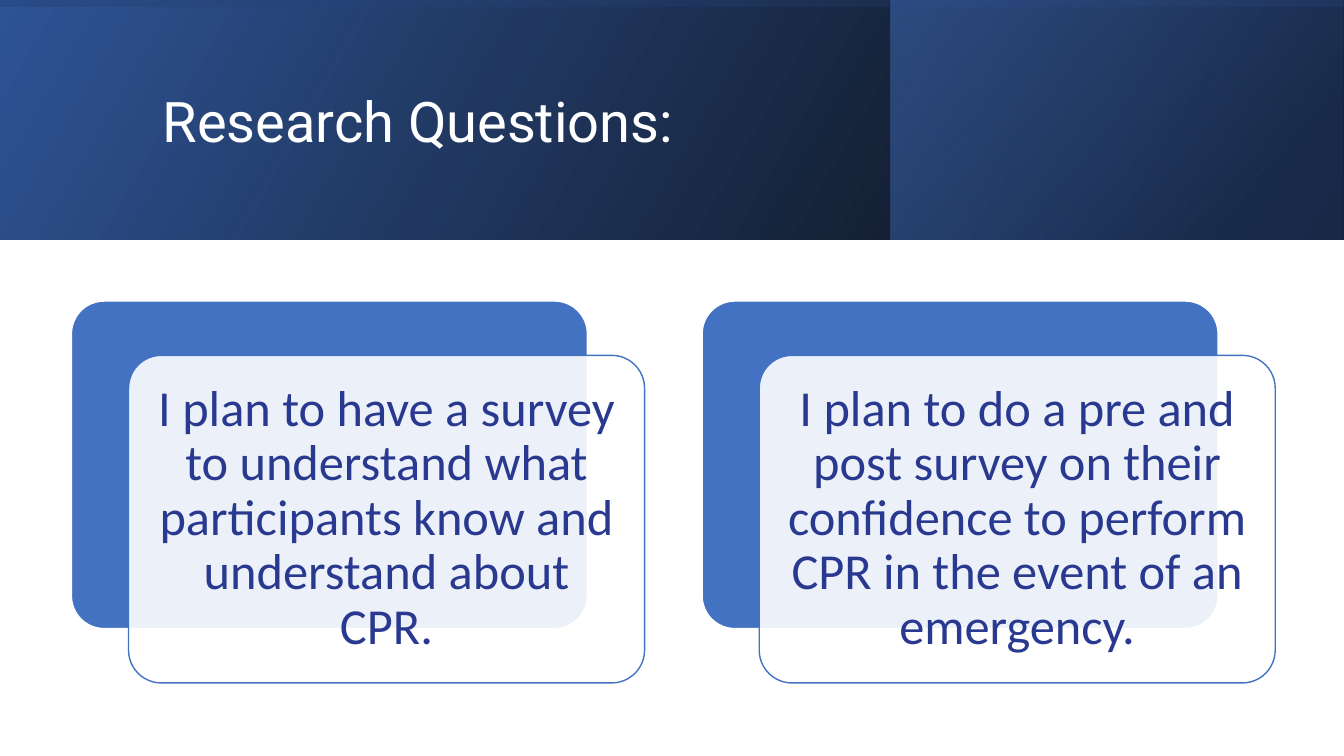
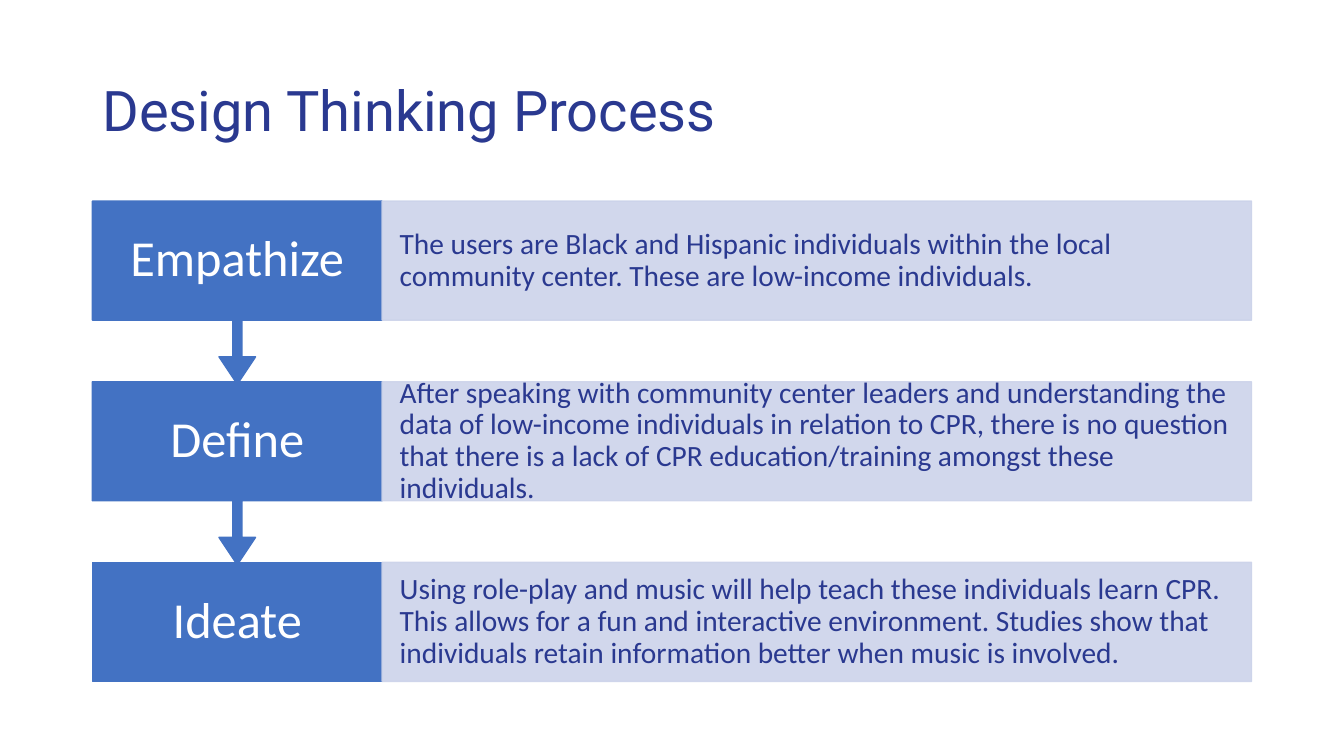
from lxml import etree
from pptx import Presentation
from pptx.dml.color import RGBColor
from pptx.enum import shapes, text
from pptx.oxml import ns
from pptx.util import Pt

WIDTH, HEIGHT = 960, 540
WHITE, BLACK = "FFFFFF", "000000"
NAVY, BLUE, PALE = "2A3990", "4372C3", "CCD3EA"
BAND_BLUE, BAND_NAVY, BAND_LIGHT = "2F5496", "1F3864", "4472C4"
TITLE_FONT, BODY_FONT = "Roboto", "Calibri"
SHAPE = shapes.MSO_SHAPE
ALIGN = text.PP_ALIGN


def rgb(color):
    return RGBColor.from_string(color)


def add_child(parent, tag, **attributes):
    return etree.SubElement(parent, ns.qn(tag), attributes)


def add_color(parent, color, alpha):
    node = add_child(parent, "a:srgbClr", val=color)
    add_child(node, "a:alpha", val=str(alpha * 1000))


def paint(shape, fill, line=None, alpha=100, line_alpha=100):
    shape.shadow.inherit = False
    shape.fill.solid()
    shape.fill.fore_color.rgb = rgb(fill)
    if line:
        shape.line.color.rgb = rgb(line)
        shape.line.width = Pt(1)
    else:
        shape.line.fill.background()
    properties = shape._element.spPr
    for route, value in (("a:solidFill", alpha), ("a:ln/a:solidFill", line_alpha)):
        if value < 100:
            color = properties.xpath(route + "/a:srgbClr")[0]
            add_child(color, "a:alpha", val=str(value * 1000))


def paint_gradient(shape, stops, angle):
    paint(shape, WHITE)
    properties = shape._element.spPr
    gradient = etree.Element(ns.qn("a:gradFill"), rotWithShape="1")
    stop_list = add_child(gradient, "a:gsLst")
    for position, color, alpha in stops:
        stop = add_child(stop_list, "a:gs", pos=str(position * 1000))
        add_color(stop, color, alpha)
    add_child(gradient, "a:lin", ang=str(angle * 60000), scaled="0")
    properties.replace(properties.find(ns.qn("a:solidFill")), gradient)


def add_box(slide, kind, left, top, width, height):
    return slide.shapes.add_shape(kind, Pt(left), Pt(top), Pt(width), Pt(height))


def write(shape, words, font, size, color, align, inset_x, inset_y):
    frame = shape.text_frame
    frame.word_wrap = True
    frame.auto_size = text.MSO_AUTO_SIZE.NONE
    frame.vertical_anchor = text.MSO_ANCHOR.MIDDLE
    frame.margin_left = frame.margin_right = Pt(inset_x)
    frame.margin_top = frame.margin_bottom = Pt(inset_y)
    frame.text = words
    paragraph = frame.paragraphs[0]
    paragraph.alignment = align
    paragraph.line_spacing = 0.9
    for run in paragraph.runs:
        run.font.name = font
        run.font.size = Pt(size)
        run.font.color.rgb = rgb(color)


def add_title(slide, words, color, left, top, width, height):
    title = slide.shapes.title
    title.left, title.top = Pt(left), Pt(top)
    title.width, title.height = Pt(width), Pt(height)
    write(title, words, TITLE_FONT, 40, color, ALIGN.LEFT, 7.2, 3.6)
    slide.shapes._spTree.append(title._element)


def add_band(slide, width, height):
    split = 636.5
    turned_left, turned_top = (width - height) / 2, (height - width) / 2
    layers = [
        (0, 0, width, height, 0, 330,
         [(0, BLACK, 96), (100, BAND_BLUE, 100)]),
        (split, 0, width - split, height, 0, 320,
         [(0, BAND_NAVY, 68), (19, BAND_NAVY, 68), (100, BAND_LIGHT, 48)]),
        (turned_left, turned_top, height, width, 270, 350,
         [(0, BAND_BLUE, 16), (23, BAND_BLUE, 16), (99, BLACK, 45), (100, BLACK, 45)]),
    ]
    for left, top, layer_width, layer_height, rotation, angle, stops in layers:
        layer = add_box(slide, SHAPE.RECTANGLE, left, top, layer_width, layer_height)
        layer.rotation = rotation
        layer._element.spPr.find(ns.qn("a:xfrm")).set("flipH", "1")
        paint_gradient(layer, stops, angle)


def add_card(slide, words, left, top, width, height):
    shift_x, shift_y = 40.8, 38.8
    card_width, card_height = width - shift_x, height - shift_y
    for x, y, fill, line, alpha in (
        (left, top, BLUE, WHITE, 100),
        (left + shift_x, top + shift_y, WHITE, BLUE, 90),
    ):
        card = add_box(slide, SHAPE.ROUNDED_RECTANGLE, x, y, card_width, card_height)
        card.adjustments[0] = 0.1
        paint(card, fill, line, alpha)
    write(card, words, BODY_FONT, 36, NAVY, ALIGN.CENTER, 10.8, 10.8)


def add_step(slide, name, detail, left, top, width, height, has_arrow):
    label_width = 207
    if has_arrow:
        label = add_box(slide, SHAPE.DOWN_ARROW_CALLOUT, left, top, label_width, height / 0.65)
        for index, value in enumerate((0.05, 0.1, 0.15, 0.65)):
            label.adjustments[index] = value
    else:
        label = add_box(slide, SHAPE.RECTANGLE, left, top, label_width, height)
    paint(label, BLUE, BLUE)
    write(label, name, BODY_FONT, 36, WHITE, ALIGN.CENTER, 14.4, 0)
    panel = add_box(slide, SHAPE.RECTANGLE, left + label_width, top, width - label_width, height)
    paint(panel, PALE, PALE, 90, 90)
    write(panel, detail, BODY_FONT, 21, NAVY, ALIGN.LEFT, 12.5, 0)


def add_questions_slide(slide):
    add_band(slide, WIDTH, 171)
    add_title(slide, "Research Questions:", WHITE, 109, 27, 765, 124)
    questions = [
        "I plan to have a survey to understand what participants know and understand about CPR.",
        "I plan to do a pre and post survey on their confidence to perform CPR in the event of an emergency.",
    ]
    for index, question in enumerate(questions):
        add_card(slide, question, 51 + index * 450.5, 215, 409.4, 272.8)


def add_process_slide(slide):
    add_title(slide, "Design Thinking Process", NAVY, 66, 28.5, 828, 104.5)
    steps = [
        ("Empathize", "The users are Black and Hispanic individuals within the local community center. "
         "These are low-income individuals."),
        ("Define", "After speaking with community center leaders and understanding the data of "
         "low-income individuals in relation to CPR, there is no question that there is a lack of "
         "CPR education/training amongst these individuals."),
        ("Ideate", "Using role-play and music will help teach these individuals learn CPR. This allows "
         "for a fun and interactive environment. Studies show that individuals retain information "
         "better when music is involved."),
    ]
    last = len(steps) - 1
    for index in range(last, -1, -1):
        name, detail = steps[index]
        add_step(slide, name, detail, 66, 143.7 + index * 129, 828, 85, index < last)


def main():
    presentation = Presentation()
    presentation.slide_width, presentation.slide_height = Pt(WIDTH), Pt(HEIGHT)
    title_only = presentation.slide_layouts[5]
    for build in (add_questions_slide, add_process_slide):
        build(presentation.slides.add_slide(title_only))
    presentation.save("out.pptx")


if __name__ == "__main__":
    main()
